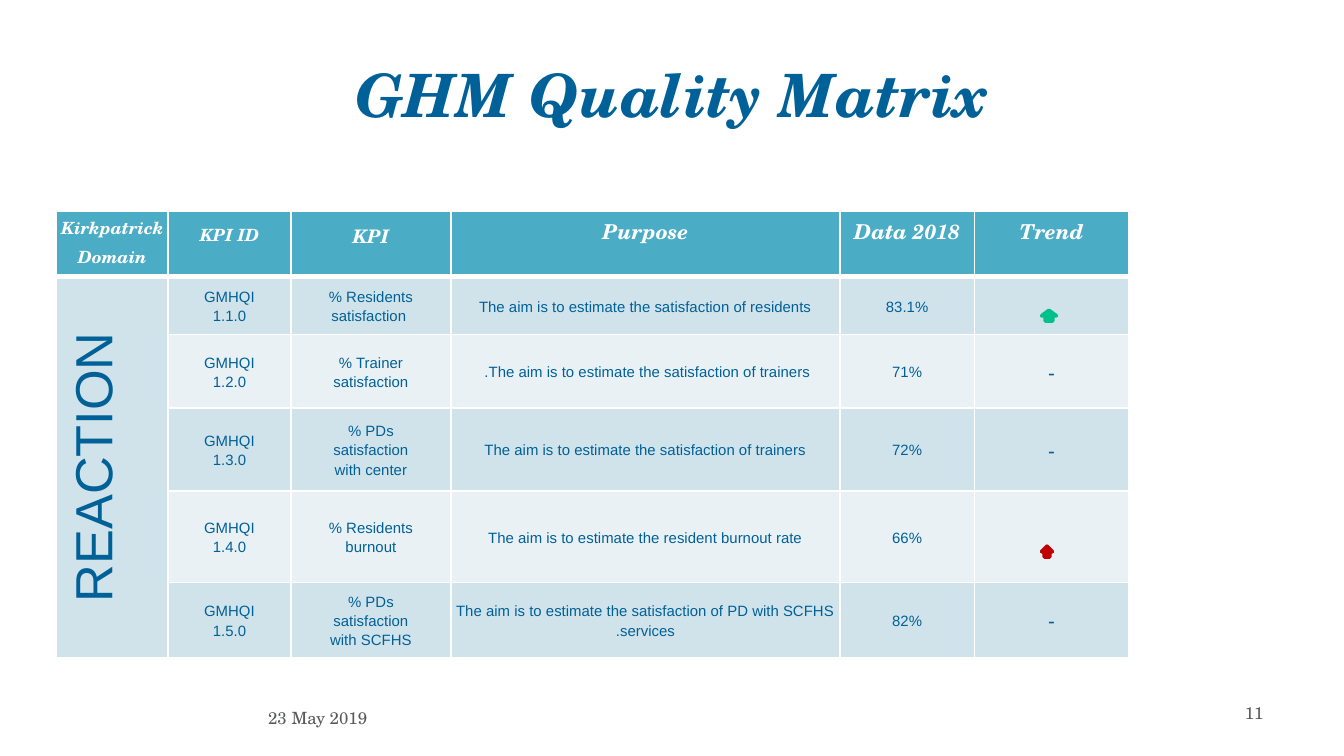
from lxml import etree
from pptx import Presentation
from pptx import util as u
from pptx.dml.color import RGBColor
from pptx.enum import shapes, text
from pptx.oxml.ns import qn

PX = 4572  # EMU per px, 200 px to the inch
SERIF, SANS, DATA = "TeX Gyre Schola", "Arial", "Calibri"
BLUE, GREY, WHITE, TEAL = "006098", "58595B", "FFFFFF", "4BACC6"
BANDS = ["D0E3EA", "E9F1F5"]
GREEN, RED = "00C18B", "C00000"
CENTER, RIGHT = text.PP_ALIGN.CENTER, text.PP_ALIGN.RIGHT
TOP, MIDDLE = text.MSO_ANCHOR.TOP, text.MSO_ANCHOR.MIDDLE

COLS = [166, 183, 238, 579, 200, 230]
ROWS = [98, 86, 109, 124, 136, 107]
HEADERS = [("Kirkpatrick Domain", 9), ("KPI ID", 9), ("KPI", 10),
           ("Purpose", 11), ("Data 2018", 11), ("Trend", 11)]
KPIS = [
    ("GMHQI 1.1.0", "% Residents satisfaction ",
     "The aim is to estimate the satisfaction of residents", "83.1%", ""),
    ("GMHQI 1.2.0", "% Trainer satisfaction",
     "The aim is to estimate the satisfaction of trainers. ", "71%", "-"),
    ("GMHQI 1.3.0", "% PDs satisfaction with center",
     "The aim is to estimate the satisfaction of trainers", "72%", "-"),
    ("GMHQI 1.4.0", "% Residents burnout",
     "The aim is to estimate the resident burnout rate", "66%", ""),
    ("GMHQI 1.5.0", "% PDs satisfaction with SCFHS",
     "The aim is to estimate the satisfaction of PD with SCFHS services.", "82%", "-"),
]


def px(n):
    return u.Emu(n * PX)


def color(value):
    return RGBColor.from_string(value)


def add_run(p, words, size, font, fill, bold=False):
    r = p.add_run()
    r.text = words
    r.font.size, r.font.name = u.Pt(size), font
    r.font.bold = r.font.italic = bold
    r.font.color.rgb = color(fill)
    return r


def add_text(s, box, words, size, fill, align, anchor=TOP, bold=False):
    tf = s.shapes.add_textbox(*map(px, box)).text_frame
    tf.word_wrap = True
    tf.vertical_anchor = anchor
    p = tf.paragraphs[0]
    p.alignment = align
    add_run(p, words, size, SERIF, fill, bold)


def style_cell(cell, fill, top=1, bottom=1):
    tcPr = cell._tc.get_or_add_tcPr()
    for side, width in (("L", 1), ("R", 1), ("T", top), ("B", bottom)):
        ln = etree.SubElement(tcPr, qn("a:ln" + side), w=str(u.Pt(width)))
        solid = etree.SubElement(ln, qn("a:solidFill"))
        etree.SubElement(solid, qn("a:srgbClr"), val=WHITE)
    cell.fill.solid()
    cell.fill.fore_color.rgb = color(fill)


def fill_cell(cell, words, size, font, fill, anchor=MIDDLE, bold=False,
              tight=False, indent=0, rtl=False):
    cell.vertical_anchor = anchor
    if tight:
        cell.margin_left = cell.margin_right = cell.margin_top = cell.margin_bottom = 0
    if not words:
        return
    p = cell.text_frame.paragraphs[0]
    p.alignment, p.line_spacing = CENTER, 1.15
    pPr = p._p.get_or_add_pPr()
    if indent:
        for name in ("marL", "marR"):
            pPr.set(name, str(px(indent)))
        pPr.set("indent", "0")
    r = add_run(p, words, size, font, fill, bold)
    if rtl:
        pPr.set("rtl", "1")
        etree.SubElement(r.font._element, qn("a:cs"), typeface=SANS)


def add_matrix(s, left, top):
    box = map(px, (left, top, sum(COLS), sum(ROWS)))
    table = s.shapes.add_table(len(ROWS), len(COLS), *box).table
    for col, width in zip(table.columns, COLS):
        col.width = px(width)
    for row, height in zip(table.rows, ROWS):
        row.height = px(height)

    # Header row
    for c, (words, size) in enumerate(HEADERS):
        cell = table.cell(0, c)
        style_cell(cell, TEAL, bottom=3)
        fill_cell(cell, words, size, SERIF, WHITE, TOP, True, tight=c not in (1, 2))

    # Domain column, merged over all the KPIs
    for i in range(len(KPIS)):
        style_cell(table.cell(i + 1, 0), BANDS[0], top=1 if i else 3)
    domain = table.cell(1, 0)
    domain.merge(table.cell(len(KPIS), 0))
    fill_cell(domain, "REACTION", 28, SANS, BLUE, tight=True, indent=20)
    domain._tc.get_or_add_tcPr().set("vert", "vert270")

    # KPI rows
    for i, kpi in enumerate(KPIS):
        for c, words in enumerate(kpi, 1):
            cell = table.cell(i + 1, c)
            style_cell(cell, BANDS[i % 2], top=1 if i else 3)
            fill_cell(cell, words, 11 if c == 5 else 8, DATA if c > 3 else SANS, BLUE,
                      tight=c > 2, indent=24 if c < 3 else 0, rtl=c > 2)


def add_trend_arrow(s, box, fill):
    sp = s.shapes.add_shape(shapes.MSO_SHAPE.DOWN_ARROW, *map(px, box))
    sp.shadow.inherit = False
    sp.fill.solid()
    sp.fill.fore_color.rgb = sp.line.color.rgb = color(fill)
    sp.line.width = u.Pt(2)
    sp._element.spPr.xfrm.set("flipV", "1")


def main():
    prs = Presentation()
    prs.slide_width, prs.slide_height = px(2000), px(1125)
    s = prs.slides.add_slide(prs.slide_layouts[6])

    # Title
    add_text(s, (100, 46, 1800, 188), "GHM Quality Matrix", 32, BLUE, CENTER, MIDDLE, True)

    # Footer
    add_text(s, (100, 1043, 466, 60), "23 May 2019", 9, GREY, RIGHT)
    add_text(s, (1434, 1036, 466, 60), "11", 9, GREY, RIGHT)

    # Matrix and its trend arrows
    add_matrix(s, 84, 314)
    add_trend_arrow(s, (1550, 813, 16, 16), RED)
    add_trend_arrow(s, (1550, 462, 22, 16), GREEN)

    prs.save("out.pptx")


if __name__ == "__main__":
    main()
